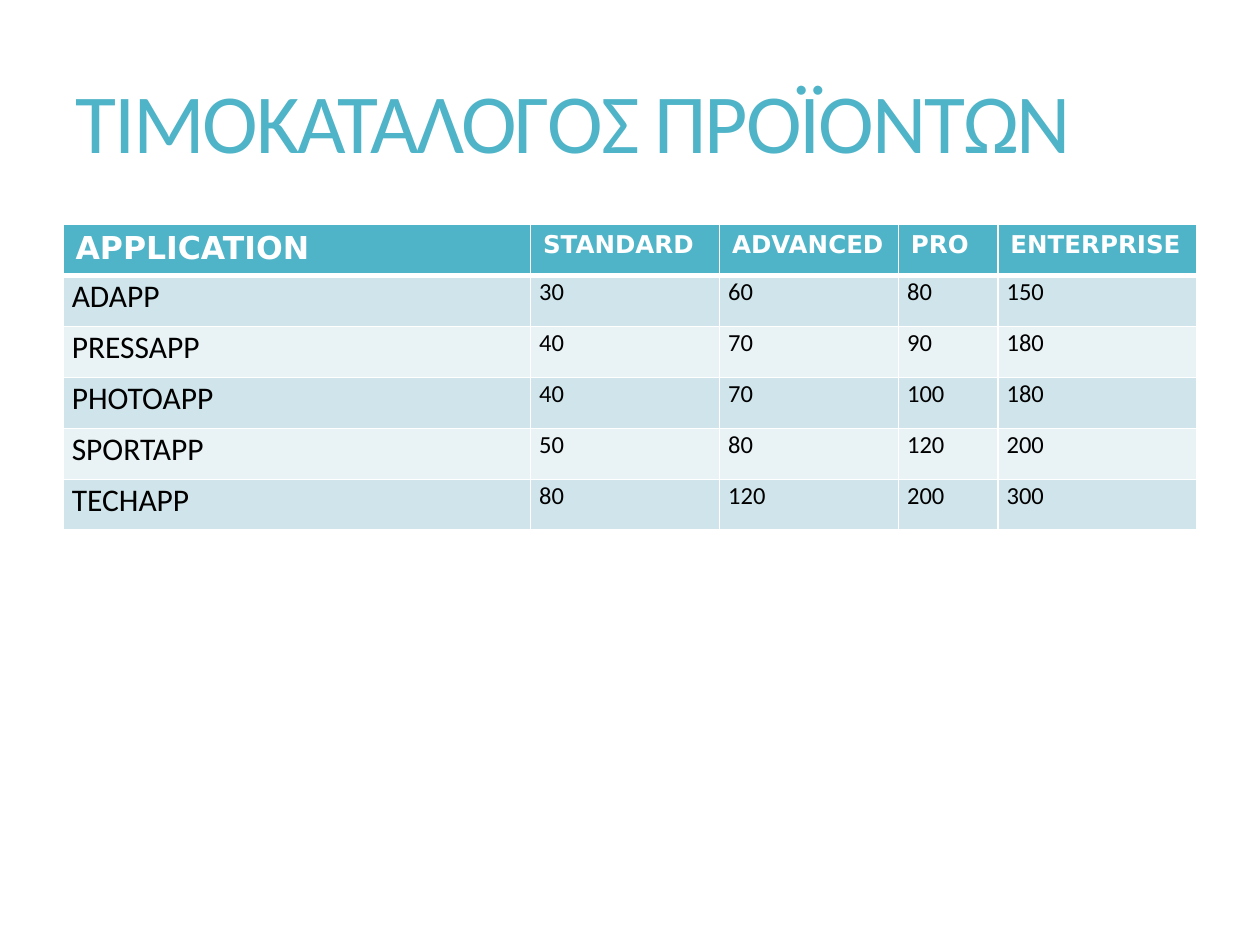
from dataclasses import dataclass

from lxml import etree
from pptx import Presentation
from pptx.dml.color import RGBColor
from pptx.enum.text import MSO_ANCHOR
from pptx.oxml.ns import qn
from pptx.util import Inches, Pt

MIDDLE = MSO_ANCHOR.MIDDLE
TOP = MSO_ANCHOR.TOP


@dataclass(frozen=True)
class Theme:
    accent: str = "50B4C8"
    band_dark: str = "D0E5EB"
    band_light: str = "E9F2F5"
    white: str = "FFFFFF"
    black: str = "000000"
    body_font: str = "Calibri"
    header_font: str = "DejaVu Sans"
    title_size: int = 48
    name_size: int = 18
    price_size: int = 14


THEME = Theme()

TITLE = "ΤΙΜΟΚΑΤΑΛΟΓΟΣ ΠΡΟΪΟΝΤΩΝ"
PLANS = ("APPLICATION", "STANDARD", "ADVANCED", "PRO", "ENTERPRISE")
PRICES = (
    ("ADAPP", 30, 60, 80, 150),
    ("PRESSAPP", 40, 70, 90, 180),
    ("PHOTOAPP", 40, 70, 100, 180),
    ("SPORTAPP", 50, 80, 120, 200),
    ("TECHAPP", 80, 120, 200, 300),
)
COLUMN_WIDTHS = (3.71, 1.5, 1.42, 0.79, 1.58)


def write_text(frame, text, *, size, color, font=THEME.body_font, bold=False,
               line_spacing=None, space_after=None, tracking=None):
    """Fill a text frame with one formatted paragraph; tracking is in points."""
    paragraph = frame.paragraphs[0]
    if line_spacing is not None:
        paragraph.line_spacing = line_spacing
    if space_after is not None:
        paragraph.space_after = Pt(space_after)
    run = paragraph.add_run()
    run.text = text
    run.font.size = Pt(size)
    run.font.name = font
    run.font.bold = bold
    run.font.color.rgb = RGBColor.from_string(color)
    if tracking is not None:
        run.font._element.set("spc", str(round(tracking * 100)))


def set_borders(cell, color, **widths):
    """Draw cell borders; widths maps L, R, T and B, in that order, to points."""
    properties = cell._tc.get_or_add_tcPr()
    for position, (side, width) in enumerate(widths.items()):
        line = etree.Element(qn(f"a:ln{side}"), w=str(Pt(width)))
        fill = etree.SubElement(line, qn("a:solidFill"))
        etree.SubElement(fill, qn("a:srgbClr"), val=color)
        properties.insert(position, line)


def style_cell(cell, fill, horizontal_inset, vertical_inset, top=1, bottom=1):
    cell.fill.solid()
    cell.fill.fore_color.rgb = RGBColor.from_string(fill)
    cell.margin_left = cell.margin_right = Inches(horizontal_inset)
    cell.margin_top = cell.margin_bottom = Inches(vertical_inset)
    cell.vertical_anchor = TOP
    set_borders(cell, THEME.white, L=1, R=1, T=top, B=bottom)


def add_title(slide, left, top, width, height):
    frame = slide.shapes.add_textbox(left, top, width, height).text_frame
    frame.word_wrap = True
    frame.vertical_anchor = MIDDLE
    write_text(frame, TITLE, size=THEME.title_size, color=THEME.accent,
               line_spacing=1.07, space_after=8, tracking=-1.2)


def add_price_table(slide, left, top, width, height):
    table = slide.shapes.add_table(len(PRICES) + 1, len(PLANS),
                                   left, top, width, height).table
    for column, share in zip(table.columns, COLUMN_WIDTHS):
        column.width = int(width * share / sum(COLUMN_WIDTHS))

    def text_size(column):
        return THEME.price_size if column else THEME.name_size

    for column, plan in enumerate(PLANS):
        cell = table.cell(0, column)
        style_cell(cell, THEME.accent, 0.1, 0.05, bottom=3)
        write_text(cell.text_frame, plan, size=text_size(column),
                   color=THEME.white, font=THEME.header_font, bold=True)

    for row, product in enumerate(PRICES, start=1):
        band = THEME.band_dark if row % 2 else THEME.band_light
        for column, value in enumerate(product):
            cell = table.cell(row, column)
            style_cell(cell, band, 0.07, 0, top=3 if row == 1 else 1)
            write_text(cell.text_frame, str(value), size=text_size(column),
                       color=THEME.black, line_spacing=1.07, space_after=8)


def main():
    deck = Presentation()
    deck.slide_width, deck.slide_height = Inches(10), Inches(7.5)
    slide = deck.slides.add_slide(deck.slide_layouts[6])
    add_title(slide, Inches(0.5), Inches(0.3), Inches(9), Inches(1.25))
    add_price_table(slide, Inches(0.5), Inches(1.78), Inches(9), Inches(2.43))
    deck.save("out.pptx")


if __name__ == "__main__":
    main()
